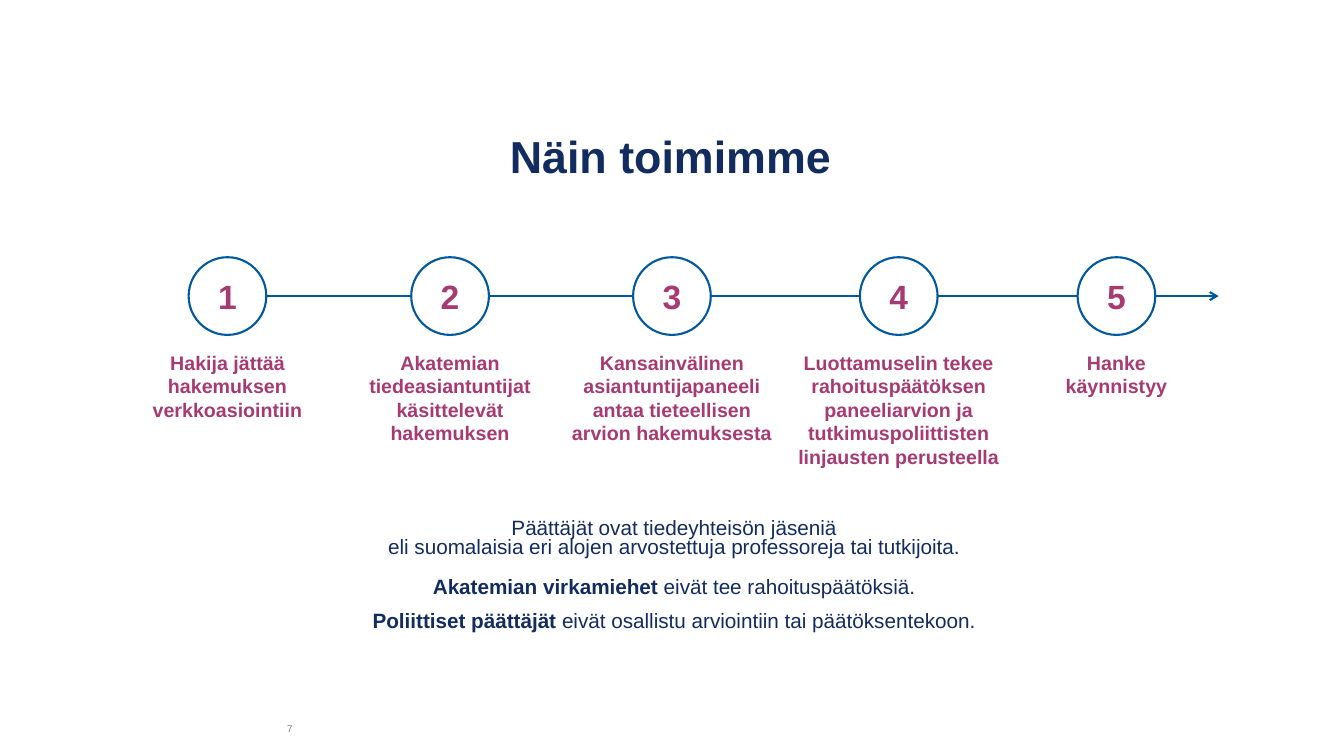
from lxml import etree
from pptx import Presentation
from pptx.dml.color import RGBColor
from pptx.enum.shapes import MSO_CONNECTOR, MSO_SHAPE
from pptx.enum.text import MSO_ANCHOR, PP_ALIGN
from pptx.oxml.ns import qn
from pptx.util import Pt

STRAIGHT = MSO_CONNECTOR.STRAIGHT
OVAL = MSO_SHAPE.OVAL
TOP, MIDDLE, BOTTOM = MSO_ANCHOR.TOP, MSO_ANCHOR.MIDDLE, MSO_ANCHOR.BOTTOM
CENTER, RIGHT = PP_ALIGN.CENTER, PP_ALIGN.RIGHT

NAVY, BLUE, PLUM, GRAY, WHITE = "132C5F", "00599C", "A63B74", "7A7D8F", "FFFFFF"

AXIS_Y = 211.5
DIAMETER = 55.5
LABEL_TOP = 247
STEPS = [
    (162.5, 152.6, 3, "Hakija jättää hakemuksen verkkoasiointiin"),
    (321.5, 152.6, 4, "Akatemian tiedeasiantuntijat käsittelevät hakemuksen"),
    (480, 170.6, 4, "Kansainvälinen asiantuntijapaneeli antaa tieteellisen arvion hakemuksesta"),
    (642, 177, 5, "Luottamuselin tekee rahoituspäätöksen paneeliarvion ja "
                  "tutkimuspoliittisten linjausten perusteella"),
    (797.5, 152.6, 2, "Hanke\nkäynnistyy"),
]
PRINCIPLES = [
    (0, [("Päättäjät ovat tiedeyhteisön jäseniä", False)]),
    (0, [("eli suomalaisia eri alojen arvostettuja professoreja tai tutkijoita.", False)]),
    (14.3, [("Akatemian virkamiehet ", True), ("eivät tee rahoituspäätöksiä.", False)]),
    (10, [("Poliittiset päättäjät ", True),
          ("eivät osallistu arviointiin tai päätöksentekoon.", False)]),
]


def color(value):
    """Turn a hex string into a colour."""
    return RGBColor.from_string(value)


class Page:
    """Draws styled elements on one slide."""

    font = "Arial"
    line_width = 1.5

    def __init__(self, slide):
        """Keep the slide to draw on."""
        self.shapes = slide.shapes

    def fill_text(self, frame, paragraphs, size, ink, align=CENTER, anchor=TOP, spacing=1.0):
        """Fill a text frame with (space before, spans) paragraphs."""
        frame.word_wrap = True
        frame.vertical_anchor = anchor
        for index, (before, spans) in enumerate(paragraphs):
            para = frame.add_paragraph() if index else frame.paragraphs[0]
            para.alignment = align
            para.line_spacing = spacing
            para.space_before = Pt(before)
            for text, bold in spans:
                span = para.add_run()
                span.text = text
                span.font.name = self.font
                span.font.size = Pt(size)
                span.font.bold = bold
                span.font.color.rgb = color(ink)

    def clear_margins(self, frame):
        """Remove the insets of a text frame."""
        frame.margin_left = frame.margin_right = Pt(0)
        frame.margin_top = frame.margin_bottom = Pt(0)

    def text(self, left, top, width, height, paragraphs, size, ink, flush=False, **layout):
        """Add a text box, flush with its edges if asked."""
        box = self.shapes.add_textbox(Pt(left), Pt(top), Pt(width), Pt(height))
        if flush:
            self.clear_margins(box.text_frame)
        self.fill_text(box.text_frame, paragraphs, size, ink, **layout)

    def arrow(self, start, end, y):
        """Add a horizontal arrow."""
        line = self.shapes.add_connector(STRAIGHT, Pt(start), Pt(y), Pt(end), Pt(y))
        line.line.color.rgb = color(BLUE)
        line.line.width = Pt(self.line_width)
        properties = line._element.spPr
        etree.SubElement(properties.find(qn("a:ln")), qn("a:tailEnd"), type="arrow")
        etree.SubElement(properties, qn("a:effectLst"))

    def circle(self, center, y, diameter, number):
        """Add a numbered circle around a centre."""
        left, top = center - diameter / 2, y - diameter / 2
        ring = self.shapes.add_shape(OVAL, Pt(left), Pt(top), Pt(diameter), Pt(diameter))
        ring.shadow.inherit = False
        ring.fill.solid()
        ring.fill.fore_color.rgb = color(WHITE)
        ring.line.color.rgb = color(BLUE)
        ring.line.width = Pt(self.line_width)
        self.clear_margins(ring.text_frame)
        self.fill_text(ring.text_frame, [(0, [(str(number), True)])], 24, PLUM, anchor=MIDDLE)


def main():
    """Build and save the slide."""
    deck = Presentation()
    deck.slide_width, deck.slide_height = Pt(960), Pt(540)
    page = Page(deck.slides.add_slide(deck.slide_layouts[6]))

    page.text(66, 57.6, 826, 73.4, [(0, [("Näin toimimme", True)])], 32, NAVY,
              flush=True, anchor=BOTTOM, spacing=0.9)
    page.arrow(168.5, 870.5, AXIS_Y)
    for number, (center, width, lines, label) in enumerate(STEPS, 1):
        page.circle(center, AXIS_Y, DIAMETER, number)
        paragraphs = [(0, [(line, True)]) for line in label.split("\n")]
        page.text(center - width / 2, LABEL_TOP, width, 16.8 * lines + 7.2,
                  paragraphs, 14, PLUM)
    page.text(87, 370.8, 789, 85.7, PRINCIPLES, 14.8, NAVY, flush=True, spacing=0.8)
    page.text(188, 513.4, 28, 13.7, [(0, [("7", False)])], 7, GRAY,
              align=RIGHT, anchor=MIDDLE)

    deck.save("out.pptx")


if __name__ == "__main__":
    main()
